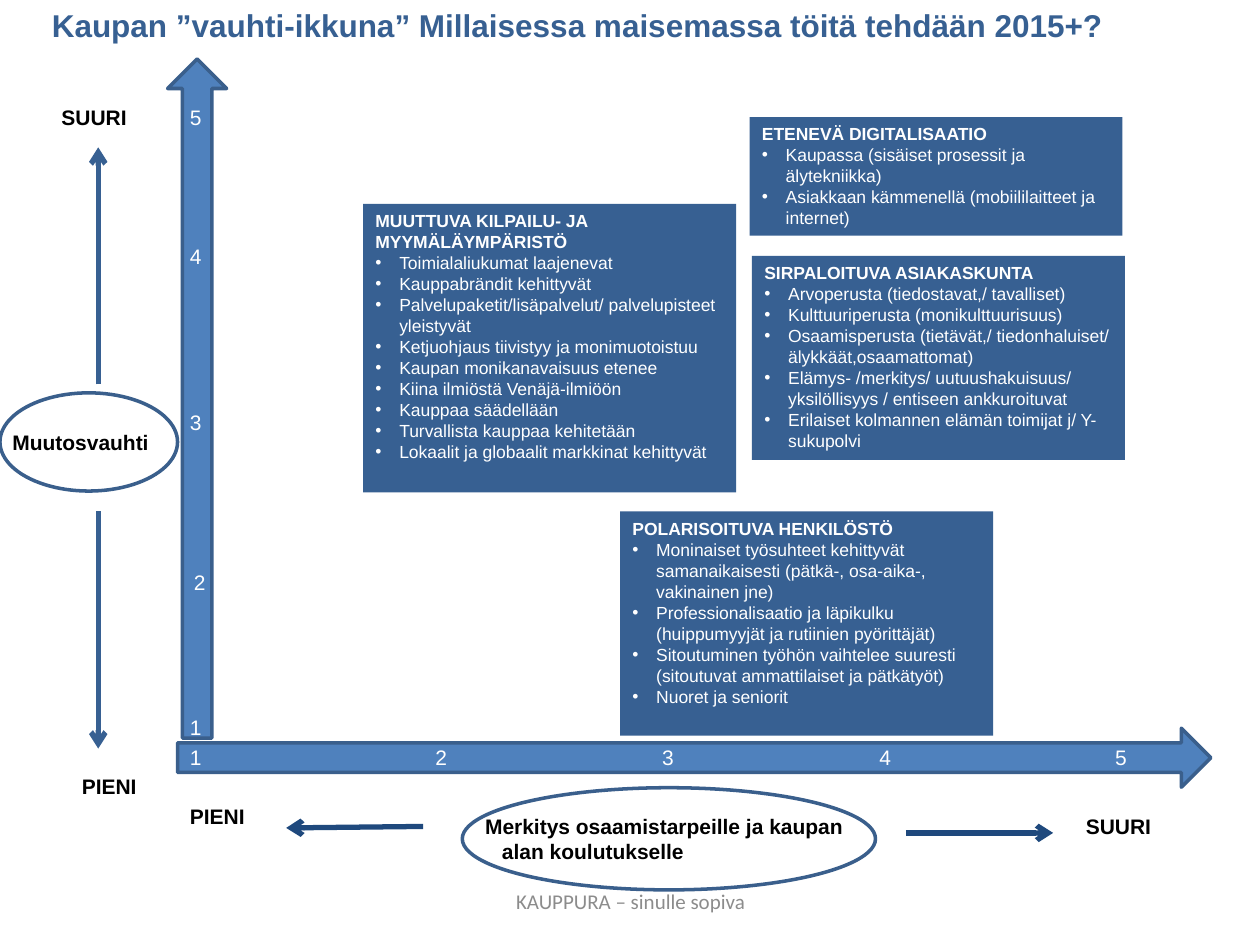
from lxml import etree
from pptx import Presentation
from pptx import util as u
from pptx.dml.color import RGBColor
from pptx.enum import shapes, text
from pptx.oxml.ns import qn

NAVY, BLUE, EDGE, DEEP = "376092", "4F81BD", "3A5F8C", "1F497D"
WHITE, BLACK, GREY = "FFFFFF", "000000", "8C8C8C"


def rgb(value):
    return RGBColor.from_string(value)


class Deck:
    font = "Arial"
    hang = 0.48

    def __init__(self, width, height):
        self.prs = Presentation()
        self.prs.slide_width, self.prs.slide_height = u.Cm(width), u.Cm(height)
        self.s = self.prs.slides.add_slide(self.prs.slide_layouts[5])

    def run(self, p, words, size, color, bold=False, font=None):
        r = p.add_run()
        r.text = words
        r.font.name, r.font.size, r.font.bold = font or self.font, u.Pt(size), bold
        r.font.color.rgb = rgb(color)

    def indent(self, p, hang, bullet=None):
        pPr = p._p.get_or_add_pPr()
        pPr.set("marL", str(u.Cm(hang)))
        pPr.set("indent", str(-u.Cm(hang)))
        if bullet:
            etree.SubElement(pPr, qn("a:buFont")).set("typeface", "Arial")
            etree.SubElement(pPr, qn("a:buChar")).set("char", bullet)

    def title(self, words, x, y, w, h):
        sp = self.s.shapes.title
        sp.left, sp.top, sp.width, sp.height = map(u.Cm, (x, y, w, h))
        tf = sp.text_frame
        tf.word_wrap, tf.auto_size = True, text.MSO_AUTO_SIZE.NONE
        tf.vertical_anchor = text.MSO_ANCHOR.TOP
        p = tf.paragraphs[0]
        p.alignment = text.PP_ALIGN.LEFT
        self.run(p, words, 18, NAVY, True)

    def label(self, words, x, y, w, h=0.76, color=BLACK, bold=True, font=None):
        sp = self.s.shapes.add_textbox(*map(u.Cm, (x, y, w, h)))
        sp.text_frame.word_wrap = True
        self.run(sp.text_frame.paragraphs[0], words, 12, color, bold, font)
        return sp.text_frame

    def shape(self, kind, x, y, w, h, fill=None, line=None):
        sp = self.s.shapes.add_shape(kind, *map(u.Cm, (x, y, w, h)))
        sp.shadow.inherit = False
        if fill:
            sp.fill.solid()
            sp.fill.fore_color.rgb = rgb(fill)
        else:
            sp.fill.background()
        if line:
            sp.line.color.rgb, sp.line.width = rgb(line), u.Pt(2)
        else:
            sp.line.fill.background()
        return sp

    def arrow(self, x1, y1, x2, y2, color):
        c = self.s.shapes.add_connector(shapes.MSO_CONNECTOR.STRAIGHT,
                                        *map(u.Cm, (x1, y1, x2, y2)))
        c.line.color.rgb, c.line.width = rgb(color), u.Pt(3)
        etree.SubElement(c.line._get_or_add_ln(), qn("a:tailEnd")).set("type", "arrow")
        etree.SubElement(c._element.spPr, qn("a:effectLst"))

    def card(self, heading, items, x, y, h, w=7.52):
        tf = self.shape(shapes.MSO_SHAPE.RECTANGLE, x, y, w, h, NAVY).text_frame
        tf.word_wrap, tf.vertical_anchor = True, text.MSO_ANCHOR.TOP
        p = tf.paragraphs[0]
        p.alignment = text.PP_ALIGN.LEFT
        self.run(p, heading, 10, WHITE, True)
        for item in items:
            p = tf.add_paragraph()
            p.alignment = text.PP_ALIGN.LEFT
            self.indent(p, self.hang, "•")
            self.run(p, item, 10, WHITE)


def main():
    d = Deck(25.4, 19.05)
    d.title("Kaupan ”vauhti-ikkuna” Millaisessa maisemassa töitä tehdään 2015+?",
            0.79, 0, 22.71, 1.02)

    # Footer
    tf = d.label("KAUPPURA – sinulle sopiva", 8.69, 17.65, 8.05, 1.02, GREY, False, "Calibri")
    tf.vertical_anchor = text.MSO_ANCHOR.MIDDLE
    tf.paragraphs[0].alignment = text.PP_ALIGN.CENTER

    # Axis names and their ends
    tf = d.label("Merkitys osaamistarpeille ja kaupan alan koulutukselle", 9.53, 16.28, 7.75, 1.3)
    tf.margin_right = 0
    d.indent(tf.paragraphs[0], 0.34)
    d.label("Muutosvauhti", 0, 8.53, 3.38)
    for words, x, y in (("SUURI", 0.99, 1.98), ("PIENI", 1.4, 15.47),
                        ("PIENI", 3.58, 16.08), ("SUURI", 21.64, 16.28)):
        d.label(words, x, y, 2.3)
    for box in ((0, 7.92, 3.58, 1.98), (9.32, 15.88, 8.33, 2.06)):
        d.shape(shapes.MSO_SHAPE.OVAL, *box, line=EDGE)

    # Direction arrows
    d.arrow(1.98, 7.75, 1.98, 2.97, NAVY)
    d.arrow(1.98, 10.31, 1.98, 15.09, NAVY)
    d.arrow(18.26, 16.79, 21.23, 16.79, DEEP)
    d.arrow(8.53, 16.66, 5.77, 16.69, DEEP)

    # Axes with their scales
    d.shape(shapes.MSO_SHAPE.RIGHT_ARROW, 3.58, 14.68, 20.83, 1.19, BLUE, EDGE)
    d.shape(shapes.MSO_SHAPE.UP_ARROW, 3.38, 1.19, 1.19, 13.69, BLUE, EDGE)
    across = [(x, 14.88) for x in (3.58, 8.53, 13.1, 17.48, 22.23)]
    upward = [(3.58, 14.28), (3.66, 11.35), (3.58, 8.13), (3.58, 4.78), (3.58, 1.98)]
    for scale in (across, upward):
        for number, (x, y) in enumerate(scale, 1):
            d.label(str(number), x, y, 0.79, color=WHITE, bold=False)

    # Theme cards
    d.card("POLARISOITUVA HENKILÖSTÖ", [
        "Moninaiset työsuhteet kehittyvät samanaikaisesti (pätkä-, osa-aika-, vakinainen jne)",
        "Professionalisaatio ja läpikulku (huippumyyjät ja rutiinien pyörittäjät)",
        "Sitoutuminen työhön vaihtelee suuresti (sitoutuvat ammattilaiset ja pätkätyöt)",
        "Nuoret ja seniorit",
    ], 12.5, 10.31, 4.52)
    d.card("ETENEVÄ DIGITALISAATIO", [
        "Kaupassa (sisäiset prosessit ja älytekniikka)",
        "Asiakkaan kämmenellä (mobiililaitteet ja internet)",
    ], 15.11, 2.36, 2.39)
    d.card("SIRPALOITUVA ASIAKASKUNTA", [
        "Arvoperusta (tiedostavat,/ tavalliset)",
        "Kulttuuriperusta (monikulttuurisuus)",
        "Osaamisperusta (tietävät,/ tiedonhaluiset/ älykkäät,osaamattomat)",
        "Elämys- /merkitys/ uutuushakuisuus/ yksilöllisyys / entiseen ankkuroituvat",
        "Erilaiset kolmannen elämän toimijat j/ Y-sukupolvi",
    ], 15.16, 5.16, 4.11)
    d.card("MUUTTUVA KILPAILU- JA MYYMÄLÄYMPÄRISTÖ", [
        "Toimialaliukumat laajenevat",
        "Kauppabrändit kehittyvät",
        "Palvelupaketit/lisäpalvelut/ palvelupisteet yleistyvät",
        "Ketjuohjaus tiivistyy ja monimuotoistuu",
        "Kaupan monikanavaisuus etenee",
        "Kiina ilmiöstä Venäjä-ilmiöön",
        "Kauppaa säädellään",
        "Turvallista kauppaa kehitetään",
        "Lokaalit ja globaalit markkinat kehittyvät",
    ], 7.32, 4.11, 5.82)

    d.prs.save("out.pptx")


if __name__ == "__main__":
    main()
